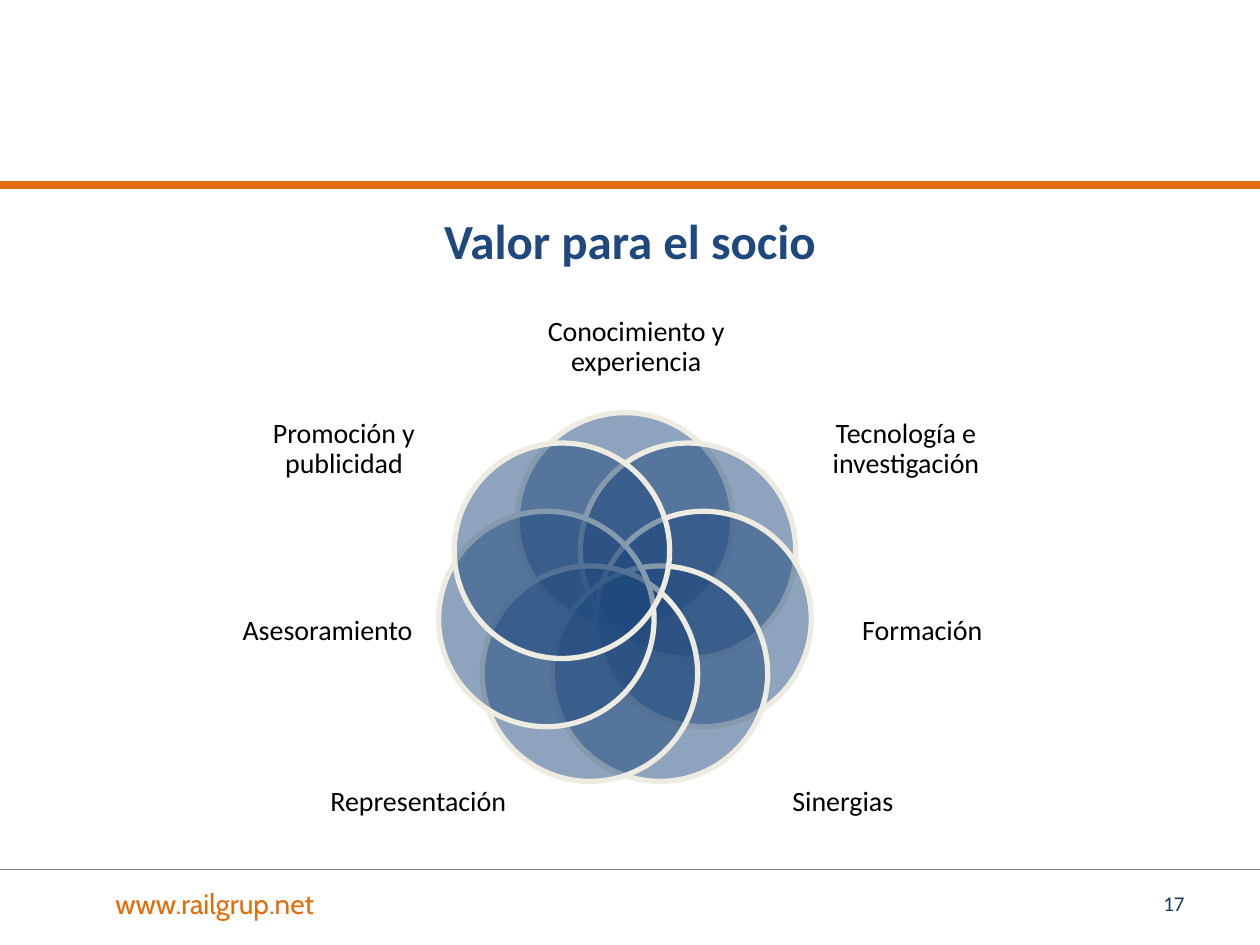
import math
import lxml.etree
import pptx
import pptx.dml.color
import pptx.enum.shapes
import pptx.enum.text
import pptx.oxml.ns
import pptx.util

BLUE = pptx.dml.color.RGBColor(0x1F, 0x49, 0x7D)
NAVY = pptx.dml.color.RGBColor(0x17, 0x37, 0x5E)
CREAM = pptx.dml.color.RGBColor(0xEE, 0xEC, 0xE1)
ORANGE = pptx.dml.color.RGBColor(0xE4, 0x6C, 0x0A)
GREY = pptx.dml.color.RGBColor(0x80, 0x80, 0x80)
BLACK = pptx.dml.color.RGBColor(0, 0, 0)
ALIGN = pptx.enum.text.PP_ALIGN
ANCHOR = pptx.enum.text.MSO_ANCHOR
qn = pptx.oxml.ns.qn

deck = pptx.Presentation()
deck.slide_width = pptx.util.Inches(10)
deck.slide_height = pptx.util.Inches(7.5)
slide = deck.slides.add_slide(deck.slide_layouts[5])
COLUMN = deck.slide_width / 100
ROW = deck.slide_height / 75


def cells(left, top, width, height):
    return [round(n * unit) for n, unit in
            zip((left, top, width, height), (COLUMN, ROW, COLUMN, ROW))]


def write(box, text, size, color, align, anchor, font="Calibri", margin=None):
    frame = box.text_frame
    frame.word_wrap = True
    frame.vertical_anchor = anchor
    if margin is not None:
        frame.margin_left = frame.margin_right = margin
        frame.margin_top = frame.margin_bottom = margin
    paragraph = frame.paragraphs[0]
    paragraph.alignment = align
    run = paragraph.add_run()
    run.text = text
    run.font.name = font
    run.font.size = pptx.util.Pt(size)
    run.font.color.rgb = color
    return paragraph


for row, color, weight in ((69, GREY, 0.75), (14.7, ORANGE, 4.5)):
    left, top, width, _ = cells(0, row, 100, 0)
    rule = slide.shapes.add_connector(
        pptx.enum.shapes.MSO_CONNECTOR.STRAIGHT, left, top, left + width, top)
    rule.line.color.rgb = color
    rule.line.width = pptx.util.Pt(weight)
    lxml.etree.SubElement(rule._element.spPr, qn("a:effectLst"))

heading = slide.shapes.title
heading.left, heading.top, heading.width, heading.height = cells(5.1, 16.2, 89.8, 7.9)
heading_line = write(heading, "Valor para el socio", 28, BLUE, ALIGN.CENTER, ANCHOR.TOP)
heading_line.runs[0].font.bold = True

AXIS, MIDDLE, ORBIT, DIAMETER = 49.6, 47.7, 6.4, 17.1
benefits = [
    ("Conocimiento y experiencia", 0.9, 22.3, 19.6, 10.5),
    ("Tecnología e investigación", 22.3, 29.9, 18.5, 11.5),
    ("Formación", 23.6, 44, 18.1, 12.3),
    ("Sinergias", 17.3, 58, 19.6, 11.3),
    ("Representación", -16.4, 58, 19.6, 11.3),
    ("Asesoramiento", -23.6, 44, 18.1, 12.3),
    ("Promoción y publicidad", -22.3, 29.9, 18.5, 11.5),
]
flower = slide.shapes.add_group_shape()
for index, (benefit, offset, top, width, height) in enumerate(benefits):
    angle = 2 * math.pi * index / len(benefits)
    petal = flower.shapes.add_shape(
        pptx.enum.shapes.MSO_SHAPE.OVAL,
        *cells(AXIS + ORBIT * math.sin(angle) - DIAMETER / 2,
               MIDDLE - ORBIT * math.cos(angle) - DIAMETER / 2,
               DIAMETER, DIAMETER))
    petal.shadow.inherit = False
    petal.fill.solid()
    petal.fill.fore_color.rgb = BLUE
    tint = petal._element.spPr.find(qn("a:solidFill")).find(qn("a:srgbClr"))
    lxml.etree.SubElement(tint, qn("a:alpha"), val="50000")
    petal.line.color.rgb = CREAM
    petal.line.width = pptx.util.Pt(3)

    label = flower.shapes.add_textbox(
        *cells(AXIS + offset - width / 2, top, width, height))
    label_line = write(label, benefit, 16, BLACK, ALIGN.CENTER, ANCHOR.MIDDLE, margin=0)
    label_line.line_spacing = 0.9

website = slide.shapes.add_textbox(*cells(5.4, 69.7, 23.3, 4))
write(website, "www.railgrup.net", 16, ORANGE, ALIGN.CENTER, ANCHOR.MIDDLE, font="Cabin")
page_number = slide.shapes.add_textbox(*cells(71.7, 69.7, 23.3, 4))
write(page_number, "17", 12, NAVY, ALIGN.RIGHT, ANCHOR.MIDDLE)

deck.save("out.pptx")
